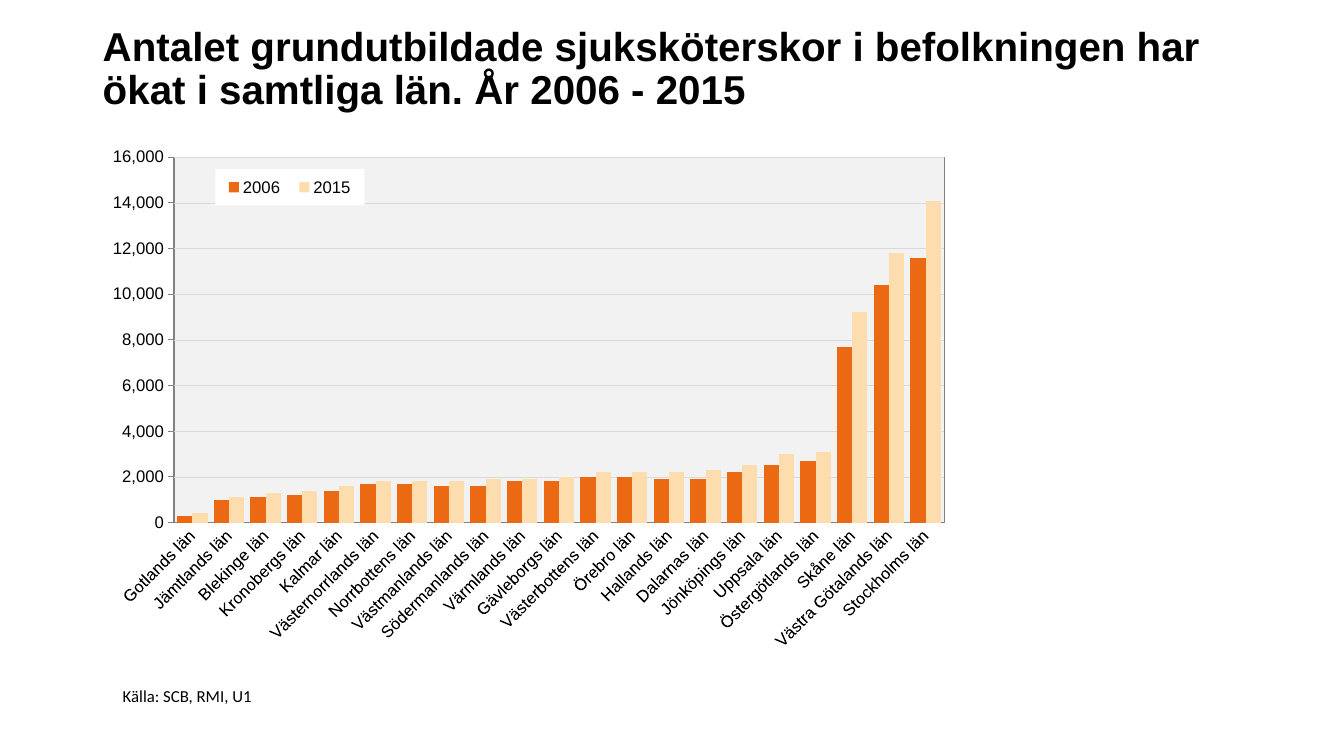
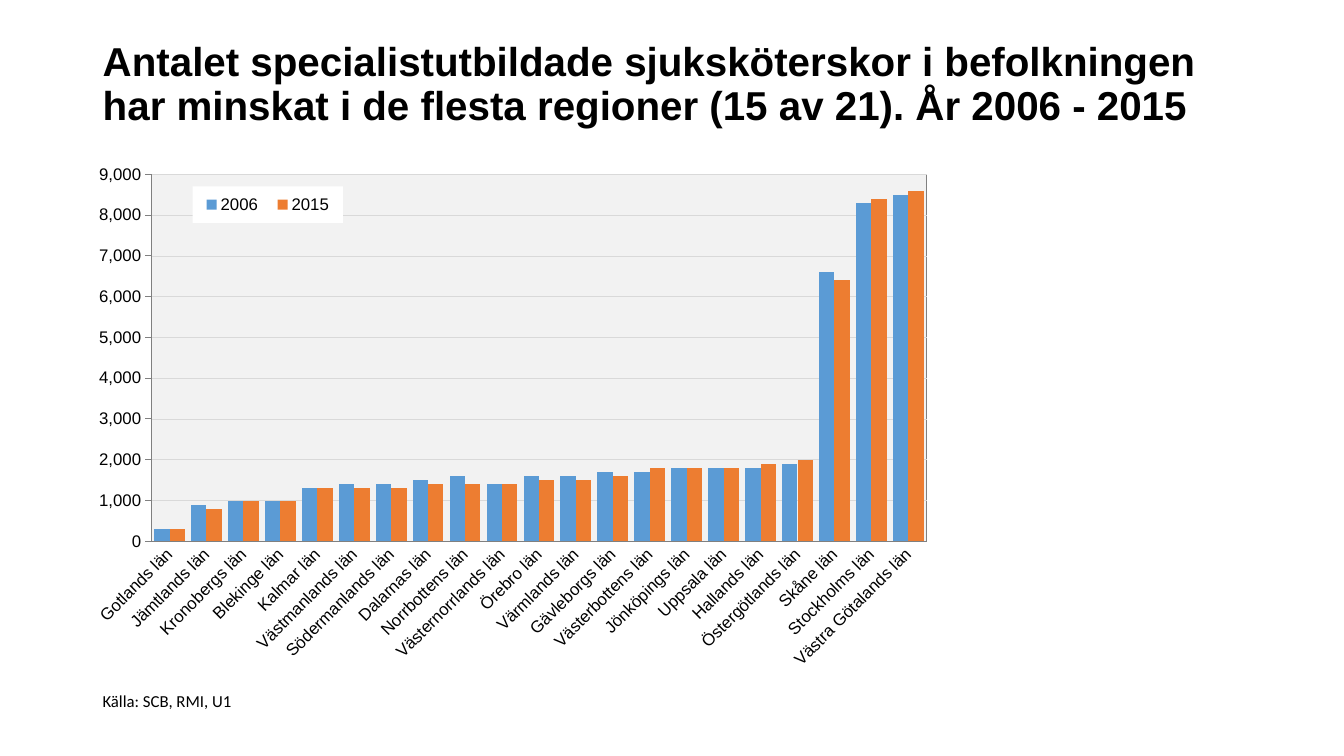
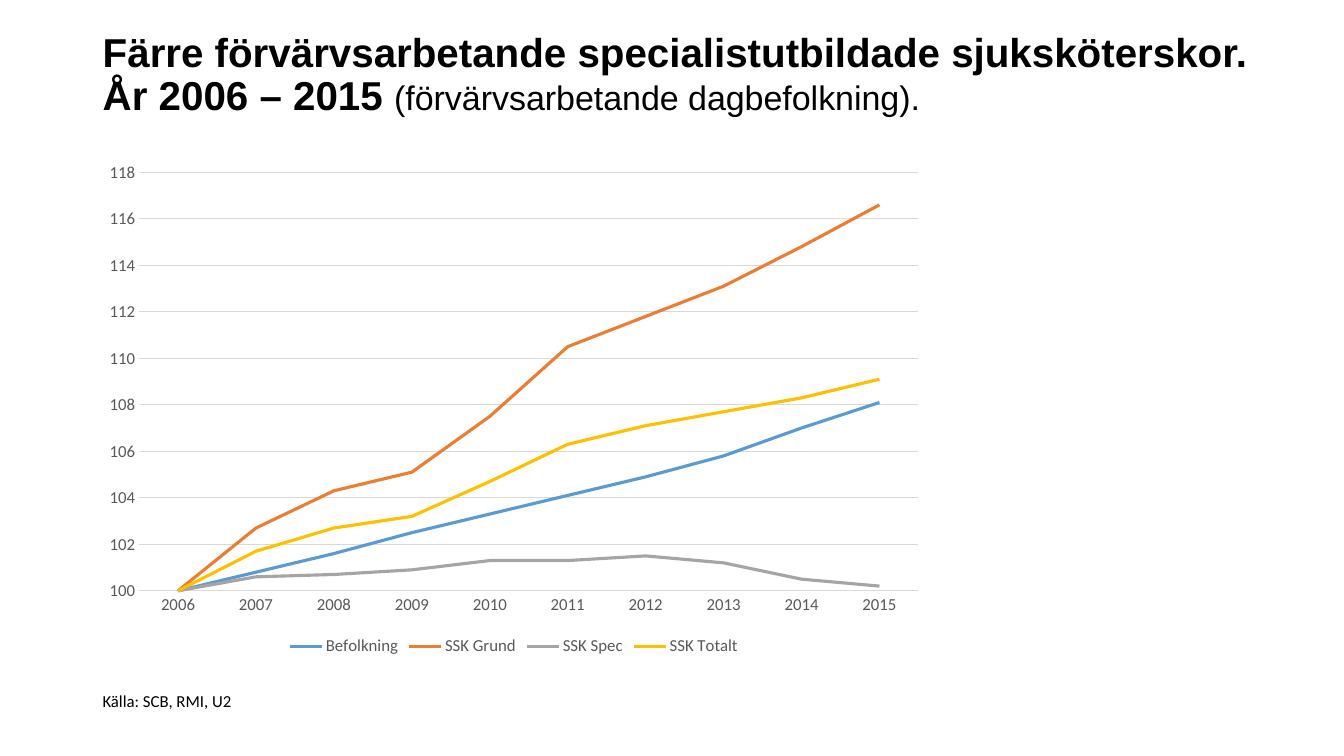
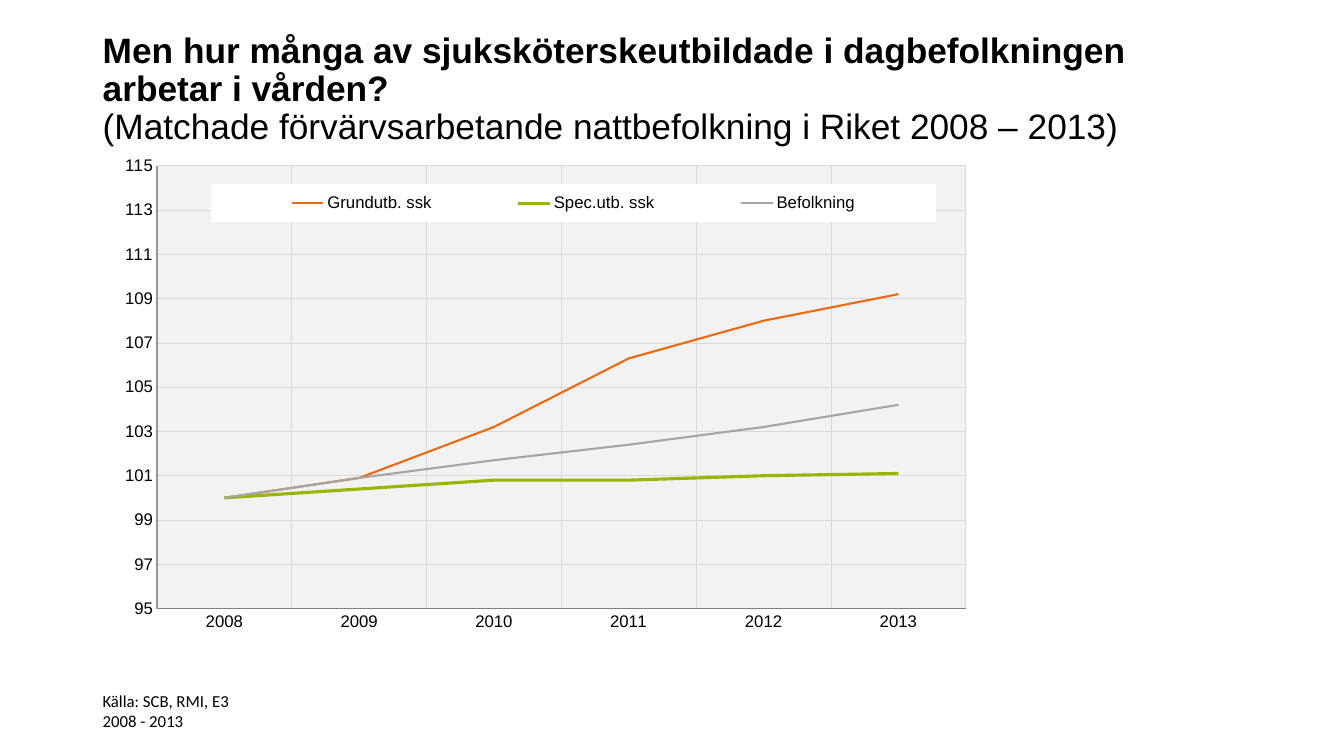
from dataclasses import dataclass
from typing import Optional

from pptx import Presentation
from pptx.chart import data as chart_data
from pptx.dml.color import RGBColor
from pptx.enum import chart as ce
from pptx.enum import text as te
from pptx.oxml import parse_xml
from pptx.util import Pt

COLORS = {
    "black": "000000", "white": "FFFFFF", "panel": "F2F2F2", "grid": "D9D9D9",
    "axis": "808080", "pale_axis": "969696", "label": "595959",
    "deep_orange": "EB6913", "cream": "FDDDAD", "blue": "5B9BD5",
    "orange": "ED7D31", "gray": "A5A5A5", "yellow": "FFC000", "green": "98B604",
}
NAMESPACES = (
    'xmlns:c="http://schemas.openxmlformats.org/drawingml/2006/chart" '
    'xmlns:a="http://schemas.openxmlformats.org/drawingml/2006/main"'
)
LABEL_SIZE = 12
Box = tuple[float, float, float, float]


@dataclass
class Series:
    name: str
    color: str
    values: list[float]
    width: float = 2.25


@dataclass
class ChartStyle:
    kind: ce.XL_CHART_TYPE
    font: str = "Arial"
    label_color: str = "black"
    value_format: str = "0"
    value_tick: ce.XL_TICK_MARK = ce.XL_TICK_MARK.NONE
    value_line: Optional[str] = "axis"
    category_line: str = "axis"
    border: Optional[str] = None
    grid_width: float = 0.5
    vertical_grid: bool = False
    label_angle: int = 0
    legend: ce.XL_LEGEND_POSITION = ce.XL_LEGEND_POSITION.BOTTOM
    legend_area: Optional[Box] = None
    plot_area: Optional[Box] = None


@dataclass
class ChartSlide:
    title: list[tuple[str, float, bool]]
    title_box: Box
    chart_box: Box
    style: ChartStyle
    categories: list[str]
    series: list[Series]
    scale: tuple[float, float, float]  # minimum, maximum, step
    source: str
    source_at: tuple[float, float] = (66.2, 489.6)


def color(name: str) -> RGBColor:
    return RGBColor.from_string(COLORS[name])


def points(values):
    return [Pt(value) for value in values]


def write(paragraph, words: str, *, size: float, font: str = "Arial", bold: bool = False,
          ink: str = "black") -> None:
    """Append words to the paragraph, with a line break at each newline."""
    for index, line in enumerate(words.split("\n")):
        if index:
            paragraph.add_line_break()
        if line:
            run = paragraph.add_run()
            run.text = line
            run.font.size, run.font.name, run.font.bold = Pt(size), font, bold
            run.font.color.rgb = color(ink)


def set_line(line_format, ink: Optional[str], width: float) -> None:
    if ink is None:
        line_format.fill.background()
    else:
        line_format.color.rgb = color(ink)
        line_format.width = Pt(width)


def layout_xml(area: Box, target: str = ""):
    x, y, w, h = area
    return parse_xml(
        f'<c:layout {NAMESPACES}><c:manualLayout>{target}'
        '<c:xMode val="edge"/><c:yMode val="edge"/>'
        f'<c:x val="{x}"/><c:y val="{y}"/><c:w val="{w}"/><c:h val="{h}"/>'
        '</c:manualLayout></c:layout>')


def fill_xml(fill: str, border: Optional[str] = None):
    line = (f'<a:solidFill><a:srgbClr val="{COLORS[border]}"/></a:solidFill>'
            if border else '<a:noFill/>')
    return parse_xml(
        f'<c:spPr {NAMESPACES}><a:solidFill><a:srgbClr val="{COLORS[fill]}"/></a:solidFill>'
        f'<a:ln w="{Pt(0.5)}">{line}</a:ln></c:spPr>')


def format_font(font, style: ChartStyle) -> None:
    font.size, font.name = Pt(LABEL_SIZE), style.font
    font.color.rgb = color(style.label_color)


def format_axes(chart, style: ChartStyle, scale: tuple[float, float, float]) -> None:
    value, category = chart.value_axis, chart.category_axis
    value.minimum_scale, value.maximum_scale, value.major_unit = scale
    value.tick_labels.number_format = style.value_format
    value.tick_labels.number_format_is_linked = False
    value.major_tick_mark = style.value_tick
    category.major_tick_mark = ce.XL_TICK_MARK.NONE
    category.has_major_gridlines = style.vertical_grid
    value.has_major_gridlines = True
    for axis, ink in ((value, style.value_line), (category, style.category_line)):
        axis.minor_tick_mark = ce.XL_TICK_MARK.NONE
        format_font(axis.tick_labels.font, style)
        set_line(axis.format.line, ink, 0.75)
        if axis.has_major_gridlines:
            set_line(axis.major_gridlines.format.line, "grid", style.grid_width)
    if style.label_angle:
        labels = category._element.find("{*}txPr/{*}bodyPr")
        labels.set("rot", str(style.label_angle * 60000))
        labels.set("vert", "horz")


def format_legend(chart, style: ChartStyle) -> None:
    chart.has_legend = True
    legend = chart.legend
    legend.position = style.legend
    legend.include_in_layout = style.legend_area is not None
    format_font(legend.font, style)
    if style.legend_area:
        element = legend._element
        for old in element.findall("{*}layout"):
            element.remove(old)
        element.find("{*}legendPos").addnext(layout_xml(style.legend_area))
        element.find("{*}overlay").addnext(fill_xml("white"))


def format_plot_area(chart, style: ChartStyle) -> None:
    if style.plot_area:
        area = chart._chartSpace.chart.plotArea
        for old in area.findall("{*}layout"):
            area.remove(old)
        area.insert(0, layout_xml(style.plot_area, '<c:layoutTarget val="inner"/>'))
        area.append(fill_xml("panel", style.border))


def add_chart(slide, page: ChartSlide) -> None:
    style = page.style
    data = chart_data.CategoryChartData()
    data.categories = page.categories
    for series in page.series:
        data.add_series(series.name, series.values)
    chart = slide.shapes.add_chart(style.kind, *points(page.chart_box), data).chart
    chart.has_title = False
    format_font(chart.font, style)
    format_axes(chart, style, page.scale)
    format_legend(chart, style)
    format_plot_area(chart, style)

    plot = chart.plots[0]
    plot.vary_by_categories = False
    is_column = style.kind == ce.XL_CHART_TYPE.COLUMN_CLUSTERED
    if is_column:
        plot.gap_width = 40
    for drawn, series in zip(plot.series, page.series):
        if is_column:
            drawn.format.fill.solid()
            drawn.format.fill.fore_color.rgb = color(series.color)
        else:
            drawn.smooth = False
            set_line(drawn.format.line, series.color, series.width)


def add_title(slide, page: ChartSlide) -> None:
    title = slide.shapes.title
    title.left, title.top, title.width, title.height = points(page.title_box)
    frame = title.text_frame
    frame.auto_size = te.MSO_AUTO_SIZE.NONE
    frame.vertical_anchor = te.MSO_ANCHOR.MIDDLE
    heading = frame.paragraphs[0]
    heading.alignment = te.PP_ALIGN.LEFT
    heading.line_spacing = 0.9
    for words, size, bold in page.title:
        write(heading, words, size=size, bold=bold)


def add_source(slide, page: ChartSlide) -> None:
    frame = slide.shapes.add_textbox(*points((*page.source_at, 108, 21.6))).text_frame
    frame.word_wrap = False
    frame.auto_size = te.MSO_AUTO_SIZE.SHAPE_TO_FIT_TEXT
    write(frame.paragraphs[0], page.source, size=12, font="Calibri")


def counties(names: str) -> list[str]:
    return [f"{name} län" for name in names.split(", ")]


def years(first: int, last: int) -> list[str]:
    return [str(year) for year in range(first, last + 1)]


COUNTY_COLUMNS = ChartStyle(
    ce.XL_CHART_TYPE.COLUMN_CLUSTERED, value_format="#,##0",
    value_tick=ce.XL_TICK_MARK.OUTSIDE, border="axis", label_angle=-45,
    legend=ce.XL_LEGEND_POSITION.TOP, legend_area=(0.12, 0.06, 0.18, 0.07),
    plot_area=(0.084, 0.037, 0.93, 0.704))
INDEX_LINES = ChartStyle(
    ce.XL_CHART_TYPE.LINE, font="Calibri", label_color="label", value_line=None,
    category_line="grid", grid_width=0.75)
PANEL_LINES = ChartStyle(
    ce.XL_CHART_TYPE.LINE, value_line="pale_axis", vertical_grid=True,
    legend=ce.XL_LEGEND_POSITION.RIGHT, legend_area=(0.096, 0.07, 0.82, 0.076),
    plot_area=(0.035, 0.033, 0.915, 0.886))

PAGES = [
    ChartSlide(
        title=[("Antalet grundutbildade sjuksköterskor i befolkningen har ökat i samtliga län. "
                "År 2006 - 2015", 28.8, True)],
        title_box=(66.2, 28.8, 828, 42.5),
        chart_box=(80.6, 98.6, 594, 370.8),
        style=COUNTY_COLUMNS,
        categories=counties(
            "Gotlands, Jämtlands, Blekinge, Kronobergs, Kalmar, Västernorrlands, Norrbottens, "
            "Västmanlands, Södermanlands, Värmlands, Gävleborgs, Västerbottens, Örebro, "
            "Hallands, Dalarnas, Jönköpings, Uppsala, Östergötlands, Skåne, "
            "Västra Götalands, Stockholms"),
        series=[
            Series("2006", "deep_orange", [
                300, 1000, 1100, 1200, 1400, 1700, 1700, 1600, 1600, 1800, 1800,
                2000, 2000, 1900, 1900, 2200, 2500, 2700, 7700, 10400, 11600]),
            Series("2015", "cream", [
                400, 1100, 1300, 1400, 1600, 1800, 1800, 1800, 1900, 1900, 2000,
                2200, 2200, 2200, 2300, 2500, 3000, 3100, 9200, 11800, 14100]),
        ],
        scale=(0, 16000, 2000),
        source="Källa: SCB, RMI, U1",
        source_at=(80.6, 486)),
    ChartSlide(
        title=[("Antalet specialistutbildade sjuksköterskor i befolkningen har minskat i de "
                "flesta regioner (15 av 21). År 2006 - 2015", 28.8, True)],
        title_box=(66.2, 28.8, 832.3, 64.1),
        chart_box=(66.2, 110.9, 596.2, 372.2),
        style=COUNTY_COLUMNS,
        categories=counties(
            "Gotlands, Jämtlands, Kronobergs, Blekinge, Kalmar, Västmanlands, Södermanlands, "
            "Dalarnas, Norrbottens, Västernorrlands, Örebro, Värmlands, Gävleborgs, "
            "Västerbottens, Jönköpings, Uppsala, Hallands, Östergötlands, Skåne, "
            "Stockholms, Västra Götalands"),
        series=[
            Series("2006", "blue", [
                300, 900, 1000, 1000, 1300, 1400, 1400, 1500, 1600, 1400, 1600,
                1600, 1700, 1700, 1800, 1800, 1800, 1900, 6600, 8300, 8500]),
            Series("2015", "orange", [
                300, 800, 1000, 1000, 1300, 1300, 1300, 1400, 1400, 1400, 1500,
                1500, 1600, 1800, 1800, 1800, 1900, 2000, 6400, 8400, 8600]),
        ],
        scale=(0, 9000, 1000),
        source="Källa: SCB, RMI, U1"),
    ChartSlide(
        title=[("Färre förvärvsarbetande specialistutbildade sjuksköterskor. "
                "År 2006 – 2015 ", 28.8, True),
               ("(förvärvsarbetande dagbefolkning).", 24.3, False)],
        title_box=(66.2, 28.8, 839.5, 51.1),
        chart_box=(66.2, 108.7, 601.9, 362.9),
        style=INDEX_LINES,
        categories=years(2006, 2015),
        series=[
            Series("Befolkning", "blue",
                   [100, 100.8, 101.6, 102.5, 103.3, 104.1, 104.9, 105.8, 107, 108.1]),
            Series("SSK Grund", "orange",
                   [100, 102.7, 104.3, 105.1, 107.5, 110.5, 111.8, 113.1, 114.8, 116.6]),
            Series("SSK Spec", "gray",
                   [100, 100.6, 100.7, 100.9, 101.3, 101.3, 101.5, 101.2, 100.5, 100.2]),
            Series("SSK Totalt", "yellow",
                   [100, 101.7, 102.7, 103.2, 104.7, 106.3, 107.1, 107.7, 108.3, 109.1]),
        ],
        scale=(100, 118, 2),
        source="Källa: SCB, RMI, U2"),
    ChartSlide(
        title=[("Men hur många av sjuksköterskeutbildade i dagbefolkningen arbetar i vården?\n",
                25.2, True),
               ("(Matchade förvärvsarbetande nattbefolkning i Riket 2008 – 2013)", 25.2, False)],
        title_box=(66.2, 21.6, 828, 85),
        chart_box=(89.3, 106.6, 632.2, 357.1),
        style=PANEL_LINES,
        categories=years(2008, 2013),
        series=[
            Series("Grundutb. ssk", "deep_orange", [100, 100.9, 103.2, 106.3, 108, 109.2], 1.5),
            Series("Spec.utb. ssk", "green", [100, 100.4, 100.8, 100.8, 101, 101.1]),
            Series("Befolkning", "gray", [100, 100.9, 101.7, 102.4, 103.2, 104.2], 1.5),
        ],
        scale=(95, 115, 2),
        source="Källa: SCB, RMI, E3 2008 - 2013"),
]


def main() -> None:
    deck = Presentation()
    deck.slide_width, deck.slide_height = Pt(960), Pt(540)
    title_only = deck.slide_layouts[5]
    for page in PAGES:
        slide = deck.slides.add_slide(title_only)
        add_title(slide, page)
        add_chart(slide, page)
        add_source(slide, page)
    deck.save("out.pptx")


if __name__ == "__main__":
    main()
